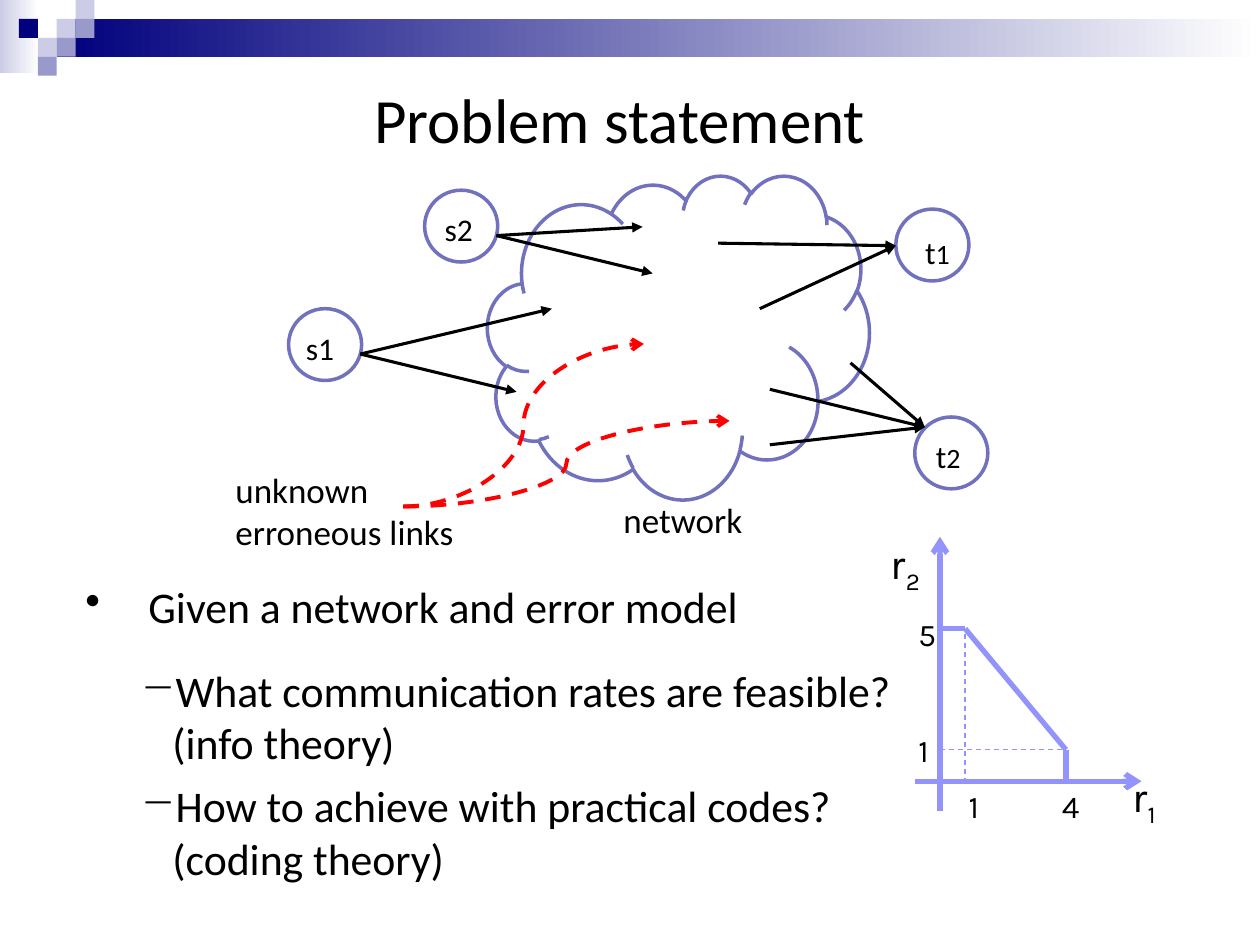
from lxml import etree
from pptx import Presentation
from pptx.dml.color import RGBColor
from pptx.enum.dml import MSO_LINE
from pptx.enum.shapes import MSO_CONNECTOR, MSO_SHAPE
from pptx.enum.text import MSO_ANCHOR, PP_ALIGN
from pptx.oxml.ns import qn
from pptx.util import Inches, Pt

RECT, ELLIPSE, CLOUD = MSO_SHAPE.RECTANGLE, MSO_SHAPE.OVAL, MSO_SHAPE.CLOUD
STRAIGHT, CURVE = MSO_CONNECTOR.STRAIGHT, MSO_CONNECTOR.CURVE
DASH = MSO_LINE.DASH
LEFT, CENTER = PP_ALIGN.LEFT, PP_ALIGN.CENTER
TOP, MIDDLE = MSO_ANCHOR.TOP, MSO_ANCHOR.MIDDLE

BLACK = RGBColor(0x00, 0x00, 0x00)
WHITE = RGBColor(0xFF, 0xFF, 0xFF)
NAVY = RGBColor(0x00, 0x00, 0x7D)
LAVENDER = RGBColor(0xCC, 0xCC, 0xE6)
PERIWINKLE = RGBColor(0x99, 0x99, 0xCC)
OUTLINE = RGBColor(0x71, 0x71, 0xBD)
PLOT = RGBColor(0x93, 0x93, 0xFC)
RED = RGBColor(0xFF, 0x00, 0x00)

BODY_FONT, PLOT_FONT = "Calibri", "Karla"
COLUMNS, ROWS = 100, 75  # square grid cells over the whole slide


class SlideBuilder:
    def __init__(self, prs):
        self.cell_w = prs.slide_width / COLUMNS
        self.cell_h = prs.slide_height / ROWS
        self.slide = prs.slides.add_slide(prs.slide_layouts[6])

    def x(self, columns):
        return round(columns * self.cell_w)

    def y(self, rows):
        return round(rows * self.cell_h)

    def box(self, left, top, width, height):
        return self.x(left), self.y(top), self.x(width), self.y(height)

    def shape(self, kind, area, fill=None, fade_to=None, outline=None):
        shape = self.slide.shapes.add_shape(kind, *self.box(*area))
        shape.shadow.inherit = False
        if fade_to is not None:
            shape.fill.gradient()
            shape.fill.gradient_angle = 0
            for stop, color in zip(shape.fill.gradient_stops, (fill, fade_to)):
                stop.color.rgb = color
        elif fill is not None:
            shape.fill.solid()
            shape.fill.fore_color.rgb = fill
        else:
            shape.fill.background()
        if outline is None:
            shape.line.fill.background()
        else:
            shape.line.color.rgb = outline
            shape.line.width = Pt(2)

    def line(self, start, end, color, width, head=None, dash=None, kind=STRAIGHT):
        link = self.slide.shapes.add_connector(
            kind, self.x(start[0]), self.y(start[1]), self.x(end[0]), self.y(end[1]))
        link.line.color.rgb = color
        link.line.width = Pt(width)
        if dash is not None:
            link.line.dash_style = dash
        properties = link._element.spPr
        if head:
            etree.SubElement(properties.find(qn("a:ln")), qn("a:tailEnd"), type=head)
        etree.SubElement(properties, qn("a:effectLst"))

    def frame(self, area, wrap=True, anchor=TOP):
        frame = self.slide.shapes.add_textbox(*self.box(*area)).text_frame
        frame.word_wrap = wrap
        frame.vertical_anchor = anchor
        return frame

    def style(self, paragraph, size, font=BODY_FONT):
        paragraph.font.size = Pt(size)
        paragraph.font.name = font
        paragraph.font.color.rgb = BLACK

    def text(self, words, area, size, font=BODY_FONT, align=LEFT, wrap=True, anchor=TOP):
        paragraph = self.frame(area, wrap, anchor).paragraphs[0]
        paragraph.text = words
        paragraph.alignment = align
        self.style(paragraph, size, font)
        return paragraph

    def indexed(self, letter, index, area, size, index_size=None, **options):
        """A letter with its number, either smaller or as a subscript."""
        number = self.text(letter, area, size, **options).add_run()
        number.text = index
        if index_size:
            number.font.size = Pt(index_size)
        else:
            number.font._element.set("baseline", "-25000")

    def bullets(self, items, area, size):
        frame = self.frame(area)
        for i, (words, mark, level, margin, hanging, before) in enumerate(items):
            paragraph = frame.paragraphs[0] if i == 0 else frame.add_paragraph()
            paragraph.text = words
            paragraph.level = level
            paragraph.space_before = Pt(before)
            self.style(paragraph, size)
            properties = paragraph._p.get_or_add_pPr()
            properties.set("marL", str(Inches(margin)))
            properties.set("indent", str(-Inches(hanging)))
            bullet = etree.Element(qn("a:buChar"), char=mark)
            properties.find(qn("a:defRPr")).addprevious(bullet)


def draw_header(page):
    page.shape(RECT, (0, 0, 3.1, 5.8), LAVENDER, fade_to=WHITE)
    page.shape(RECT, (4.5, 1.5, 95.5, 3), NAVY, fade_to=WHITE)
    side = 1.5
    squares = [(3, 1, LAVENDER), (4, 0, LAVENDER), (4, 1, PERIWINKLE),
               (2, 2, LAVENDER), (1, 1, NAVY), (3, 2, PERIWINKLE), (2, 3, PERIWINKLE)]
    for column, row, color in squares:
        page.shape(RECT, (column * side, row * side, side, side), color)


def draw_network(page):
    page.shape(CLOUD, (38.7, 13.9, 30.3, 25.7), outline=OUTLINE)
    for left, top in [(22.9, 24.5), (33.7, 15.1), (71.1, 16.6), (72.6, 33.1)]:
        page.shape(ELLIPSE, (left, top, 5.8, 5.7), outline=OUTLINE)

    # Node and part names
    page.text("s1", (23.3, 25.6, 6, 4.1), 18)
    page.text("s2", (34.3, 16.2, 6, 4.1), 18)
    page.indexed("t", "1", (71.9, 18, 5, 3.5), 18, 16, align=CENTER)
    page.indexed("t", "2", (73.3, 34.2, 6, 4.1), 18, 16)
    page.text("unknown erroneous links", (17.7, 36.7, 20.3, 7.8), 20)
    page.text("network", (48.5, 39.1, 18, 3.8), 20)

    # Links from the sources and to the sinks
    s1, s2, t1, t2 = (28.6, 28.1), (39.4, 18.7), (71.1, 19.5), (73.4, 33.9)
    links = [(s1, (43.8, 24.5)), (s1, (41, 31.1)), (s2, (51, 18)), (s2, (51.8, 21.7)),
             ((57, 19.3), t1), ((60.3, 24.5), t1),
             ((67.5, 28.8), t2), ((61.1, 30.9), t2), ((61.1, 35.3), t2)]
    for start, end in links:
        page.line(start, end, BLACK, 1.75, head="triangle")

    # Erroneous links
    for end in [(51.1, 27.3), (57.9, 33.4)]:
        page.line((32, 40.2), end, RED, 2.25, head="arrow", dash=DASH, kind=CURVE)


def draw_rate_region(page):
    axis_x, axis_y = 74.6, 62
    low_x, high_x = 76.6, 84.6
    low_y, high_y = 59.5, 49.9

    # Axes
    page.line((axis_x, 64.4), (axis_x, 42.6), PLOT, 3, head="arrow")
    page.line((72.6, axis_y), (90.6, axis_y), PLOT, 3, head="arrow")

    # Border of the region
    border = [(axis_x, high_y), (low_x, high_y), (high_x, low_y), (high_x, axis_y)]
    for start, end in zip(border, border[1:]):
        page.line(start, end, PLOT, 3)

    # Guides
    page.line((low_x, 50.3), (low_x, axis_y), PLOT, 0.75, dash=DASH)
    page.line((axis_x, low_y), (high_x, low_y), PLOT, 0.75, dash=DASH)

    # Axis values and names
    for value, left, top in [("5", 71.9, 48.3), ("1", 71.9, 57.5),
                             ("4", 83.3, axis_y), ("1", 75.9, axis_y)]:
        page.text(value, (left, top, 2.6, 3.9), 18, PLOT_FONT, wrap=False)
    for index, left, top in [("2", 69.7, 42.2), ("1", 88.9, 60.7)]:
        page.indexed("r", index, (left, top, 4.5, 5), 24, font=PLOT_FONT, wrap=False)


def main():
    prs = Presentation()
    prs.slide_width, prs.slide_height = Inches(10), Inches(7.5)
    page = SlideBuilder(prs)

    draw_header(page)
    page.text("Problem statement", (4.2, 2.9, 90, 13), 36, align=CENTER, anchor=MIDDLE)
    page.bullets([
        ("Given a network and error model", "•", 0, 0.5, 0.5, 0),
        ("What communication rates are feasible? (info theory)", "−", 1, 0.69, 0.25, 18),
        ("How to achieve with practical codes? (coding theory)", "−", 1, 0.69, 0.25, 6),
    ], (5.8, 45.5, 66.2, 24.2), 25)
    draw_network(page)
    draw_rate_region(page)

    prs.save("out.pptx")


if __name__ == "__main__":
    main()
